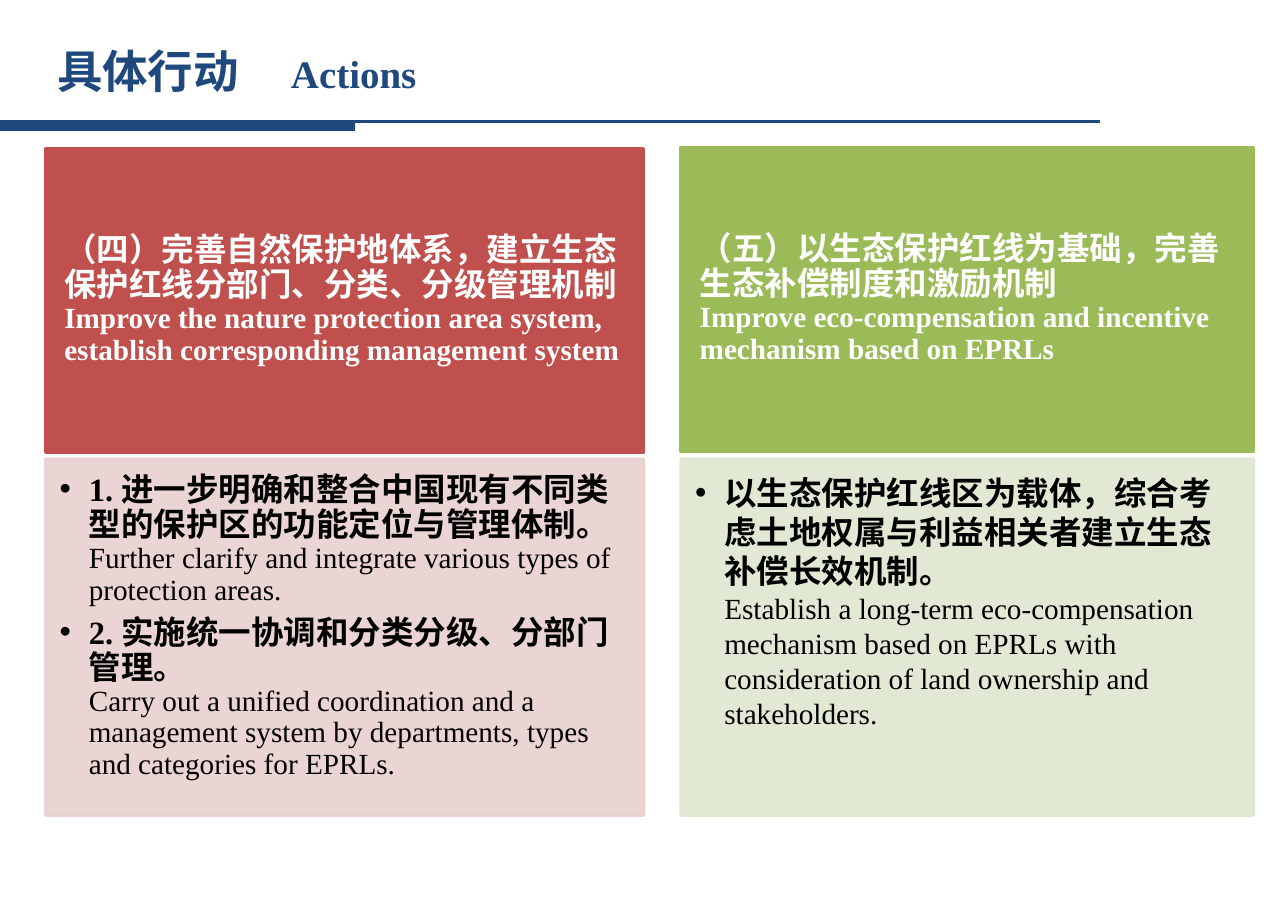
from dataclasses import dataclass

from lxml import etree
from pptx import Presentation
from pptx.dml.color import RGBColor
from pptx.enum.shapes import MSO_CONNECTOR, MSO_SHAPE
from pptx.enum.text import MSO_ANCHOR, MSO_AUTO_SIZE, PP_ALIGN
from pptx.oxml.ns import qn
from pptx.util import Inches, Pt

LEFT = PP_ALIGN.LEFT
TOP, MIDDLE = MSO_ANCHOR.TOP, MSO_ANCHOR.MIDDLE
NO_FIT = MSO_AUTO_SIZE.NONE
STRAIGHT = MSO_CONNECTOR.STRAIGHT
RECTANGLE = MSO_SHAPE.RECTANGLE

COLOURS = {
    "navy": "1F497D", "white": "FFFFFF", "black": "000000",
    "red": "C0504D", "pale red": "E8D0D0",
    "green": "9BBB59", "pale green": "DEE7D1",
}
SERIF, SANS, BULLET_FONT = "Times New Roman", "Noto Sans CJK SC", "Arial"
COMPARISON_LAYOUT = 4
PAGE_HEIGHT = 63 / 8
PAGE_WIDTH = PAGE_HEIGHT * 7 / 5
HEAD_INSETS = (0.16, 0.09, 0.16, 0.09)
LIST_INSETS = (0.12, 0.12, 0.16, 0.17)
HEAD_HEIGHT, LIST_HEIGHT = 2.6, 3.05
LIST_TOP = 3.93
RULE_TOP = 1.04


@dataclass
class Bilingual:
    chinese: str
    english: str


@dataclass
class Column:
    left: float
    top: float
    width: float
    colour: str
    heading: Bilingual
    actions: list[Bilingual]
    line_spacing: float


COLUMNS = [
    Column(
        0.39, 1.27, 5.12, "red",
        Bilingual("（四）完善自然保护地体系，建立生态保护红线分部门、分类、分级管理机制",
                  "Improve the nature protection area system, establish corresponding management system"),
        [Bilingual("1. 进一步明确和整合中国现有不同类型的保护区的功能定位与管理体制。",
                   "Further clarify and integrate various types of protection areas."),
         Bilingual("2. 实施统一协调和分类分级、分部门管理。",
                   "Carry out a unified coordination and a management system by departments, "
                   "types and categories for EPRLs.")],
        0.9),
    Column(
        5.83, 1.26, 4.9, "green",
        Bilingual("（五）以生态保护红线为基础，完善生态补偿制度和激励机制",
                  "Improve eco-compensation and incentive mechanism based on EPRLs"),
        [Bilingual("以生态保护红线区为载体，综合考虑土地权属与利益相关者建立生态补偿长效机制。",
                   "Establish a long-term eco-compensation mechanism based on EPRLs with "
                   "consideration of land ownership and stakeholders.")],
        1.0),
]


def rgb(name: str) -> RGBColor:
    """Return a named colour."""
    return RGBColor.from_string(COLOURS[name])


def place(box, left: float, top: float, width: float, height: float) -> None:
    """Move and size a box in inches."""
    box.left, box.top = Inches(left), Inches(top)
    box.width, box.height = Inches(width), Inches(height)


def prepare_frame(box, anchor, insets=(0.1, 0.05, 0.1, 0.05)):
    """Set the anchor and insets of a box and return its text frame."""
    frame = box.text_frame
    frame.auto_size, frame.word_wrap = NO_FIT, True
    frame.vertical_anchor = anchor
    (frame.margin_left, frame.margin_top,
     frame.margin_right, frame.margin_bottom) = map(Inches, insets)
    return frame


def format_para(para, line_spacing: float, space_after: float = 0) -> None:
    """Align a paragraph left and set its spacing."""
    para.alignment, para.line_spacing = LEFT, line_spacing
    para.space_before, para.space_after = Pt(0), Pt(space_after)


def add_span(para, text: str, size: float, colour: str, bold: bool = True, font: str = SERIF) -> None:
    """Add one formatted run."""
    span = para.add_run()
    span.text = text
    span.font.size, span.font.bold, span.font.name = Pt(size), bold, font
    span.font.color.rgb = rgb(colour)
    etree.SubElement(span.font._element, qn("a:ea"), typeface=SANS)


def add_bilingual(para, words: Bilingual, colour: str, english_bold: bool) -> None:
    """Add Chinese text with its English version on the next line."""
    add_span(para, words.chinese, 20, colour)
    para.add_line_break()
    add_span(para, words.english, 18, colour, english_bold)


def add_bullet(para) -> None:
    """Give a paragraph a hanging round bullet."""
    properties = para._p.get_or_add_pPr()
    properties.set("marL", str(Inches(0.25)))
    properties.set("indent", str(-Inches(0.25)))
    etree.SubElement(properties, qn("a:buFont"), typeface=BULLET_FONT)
    etree.SubElement(properties, qn("a:buChar"), char="•")


def paint(box, colour: str, alpha: int = 100) -> None:
    """Fill and outline a box in one colour."""
    box.fill.solid()
    box.fill.fore_color.rgb = rgb(colour)
    box.line.color.rgb = rgb(colour)
    box.line.width = Pt(2)
    if alpha < 100:
        for tone in box._element.spPr.iter(qn("a:srgbClr")):
            etree.SubElement(tone, qn("a:alpha"), val=str(alpha * 1000))


def draw_header(page) -> None:
    """Draw the title and the rule below it."""
    rule = page.shapes.add_connector(STRAIGHT, 0, Inches(RULE_TOP), Inches(9.42), Inches(RULE_TOP))
    rule.line.color.rgb, rule.line.width = rgb("navy"), Pt(1.5)
    etree.SubElement(rule._element.spPr, qn("a:effectLst"))
    bar = page.shapes.add_shape(RECTANGLE, 0, Inches(RULE_TOP), Inches(3.04), Inches(0.08))
    bar.shadow.inherit = False
    bar.fill.solid()
    bar.fill.fore_color.rgb = rgb("navy")
    bar.line.fill.background()
    title = page.shapes.title
    place(title, 0.39, 0.31, 9.2, 0.65)
    para = prepare_frame(title, MIDDLE).paragraphs[0]
    format_para(para, 0.9)
    tabs = etree.SubElement(para._p.get_or_add_pPr(), qn("a:tabLst"))
    etree.SubElement(tabs, qn("a:tab"), pos=str(Inches(2)), algn="l")
    add_span(para, "具体行动\t", 28, "navy", font=SANS)
    add_span(para, "Actions", 24, "navy")


def draw_column(column: Column, head, body) -> None:
    """Draw a coloured heading above its list of actions."""
    place(head, column.left, column.top, column.width, HEAD_HEIGHT)
    paint(head, column.colour)
    para = prepare_frame(head, MIDDLE, HEAD_INSETS).paragraphs[0]
    format_para(para, 0.9, 7)
    add_bilingual(para, column.heading, "white", True)

    place(body, column.left, LIST_TOP, column.width, LIST_HEIGHT)
    paint(body, f"pale {column.colour}", 90)
    frame = prepare_frame(body, TOP, LIST_INSETS)
    for index, action in enumerate(column.actions):
        para = frame.add_paragraph() if index else frame.paragraphs[0]
        format_para(para, column.line_spacing, 6)
        add_bullet(para)
        add_bilingual(para, action, "black", False)


def main() -> None:
    """Build and save the deck."""
    deck = Presentation()
    deck.slide_width, deck.slide_height = Inches(PAGE_WIDTH), Inches(PAGE_HEIGHT)
    page = deck.slides.add_slide(deck.slide_layouts[COMPARISON_LAYOUT])
    draw_header(page)
    boxes = list(page.placeholders)[1:]
    for column, head, body in zip(COLUMNS, boxes[::2], boxes[1::2]):
        draw_column(column, head, body)
    deck.save("out.pptx")


if __name__ == "__main__":
    main()
